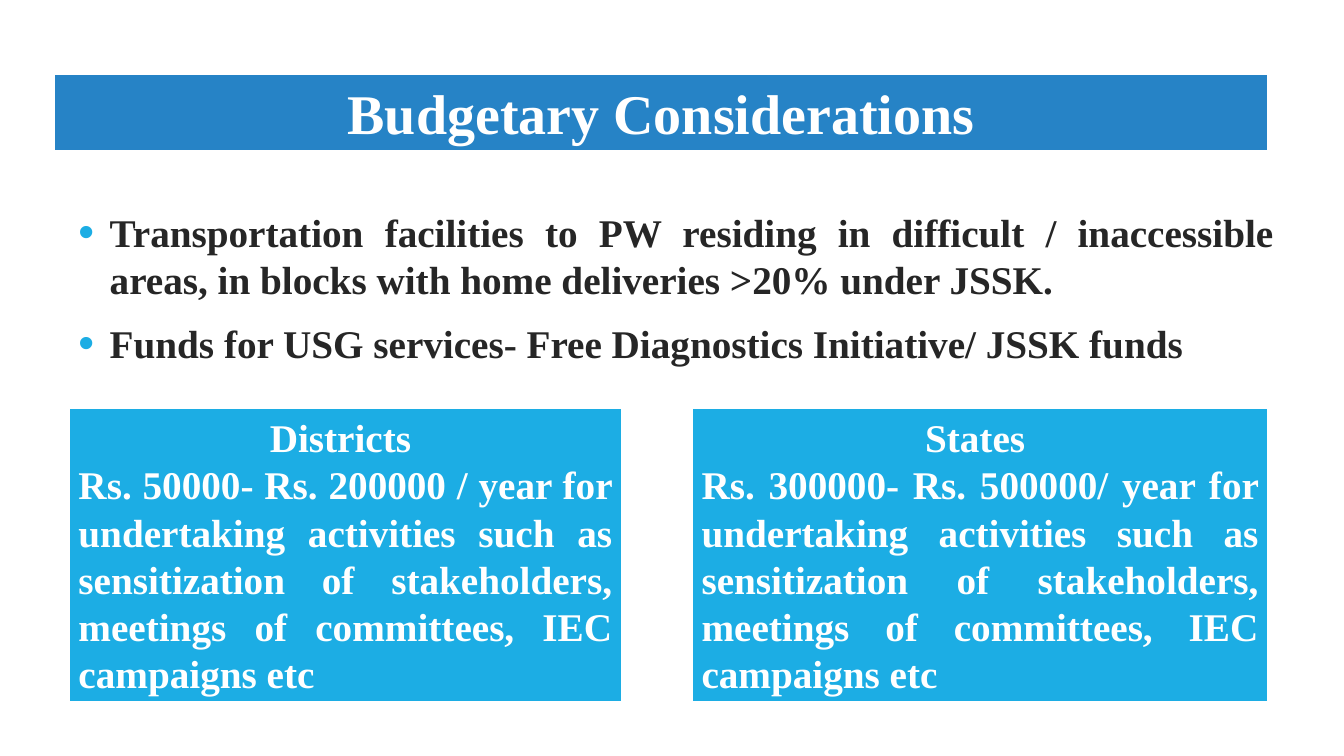
from lxml import etree
from pptx import Presentation
from pptx.dml.color import RGBColor
from pptx.enum.shapes import MSO_SHAPE
from pptx.enum.text import MSO_ANCHOR, PP_ALIGN
from pptx.oxml.ns import qn
from pptx.util import Pt

EMU_PER_PX = 9144
RECTANGLE = MSO_SHAPE.RECTANGLE
CENTER, JUSTIFY = PP_ALIGN.CENTER, PP_ALIGN.JUSTIFY
TOP, MIDDLE = MSO_ANCHOR.TOP, MSO_ANCHOR.MIDDLE

FONT = "Times New Roman"
WHITE, DARK = "FFFFFF", "262626"
BLUE, CYAN = "2683C6", "1CADE4"
BULLET_INDENT = 31

BULLETS = [
    "Transportation facilities to PW residing in difficult / inaccessible "
    "areas, in blocks with home deliveries >20% under JSSK.",
    "Funds for USG services- Free Diagnostics Initiative/ JSSK funds",
]
ACTIVITIES = ("undertaking activities such as sensitization of stakeholders, "
              "meetings of committees, IEC campaigns etc")
BUDGETS = [
    (68, 549, "Districts ", "Rs. 50000- Rs. 200000 / year for "),
    (686, 572, "States ", "Rs. 300000- Rs. 500000/ year for "),
]


def px(length):
    return length * EMU_PER_PX


def color(hex_string):
    return RGBColor.from_string(hex_string)


def add_paragraphs(text_frame, texts, alignments, size, hex_color):
    text_frame.text = "\n".join(texts)
    for paragraph, alignment in zip(text_frame.paragraphs, alignments):
        paragraph.alignment = alignment
        for run in paragraph.runs:
            run.font.name = FONT
            run.font.size = Pt(size)
            run.font.bold = True
            run.font.color.rgb = color(hex_color)


def add_bullet(paragraph):
    properties = paragraph._p.get_or_add_pPr()
    properties.set("marL", str(px(BULLET_INDENT)))
    properties.set("indent", str(-px(BULLET_INDENT)))
    bullet_color = etree.SubElement(properties, qn("a:buClr"))
    etree.SubElement(bullet_color, qn("a:srgbClr"), val=CYAN)
    etree.SubElement(properties, qn("a:buSzPct"), val="115000")
    etree.SubElement(properties, qn("a:buFont"), typeface="Arial")
    etree.SubElement(properties, qn("a:buChar"), char="•")


def add_bullet_list(slide, left, top, width, height, texts):
    text_frame = slide.shapes.add_textbox(
        px(left), px(top), px(width), px(height)).text_frame
    text_frame.word_wrap = True
    text_frame.vertical_anchor = TOP
    add_paragraphs(text_frame, texts, [JUSTIFY] * len(texts), 28, DARK)
    for index, paragraph in enumerate(text_frame.paragraphs):
        add_bullet(paragraph)
        paragraph.space_after = Pt(6)
        paragraph.space_before = Pt(5.6 if index else 0)


def add_panel(slide, left, top, width, height, fill, texts, alignments, size):
    shape = slide.shapes.add_shape(
        RECTANGLE, px(left), px(top), px(width), px(height))
    shape.shadow.inherit = False
    shape.fill.solid()
    shape.fill.fore_color.rgb = color(fill)
    shape.line.color.rgb = color(WHITE)
    shape.line.width = Pt(2)
    shape.text_frame.word_wrap = True
    shape.text_frame.vertical_anchor = MIDDLE
    add_paragraphs(shape.text_frame, texts, alignments, size, WHITE)


def main():
    presentation = Presentation()
    presentation.slide_width = px(1333)
    presentation.slide_height = px(750)
    slide = presentation.slides.add_slide(presentation.slide_layouts[6])

    add_bullet_list(slide, 68, 202, 1205, 112, BULLETS)
    add_panel(slide, 53, 73, 1205, 77, BLUE,
              ["Budgetary Considerations"], [CENTER], 40)
    for left, width, heading, amount in BUDGETS:
        add_panel(slide, left, 404, width, 293, CYAN,
                  [heading, amount + ACTIVITIES], [CENTER, JUSTIFY], 28)

    presentation.save("out.pptx")


if __name__ == "__main__":
    main()
